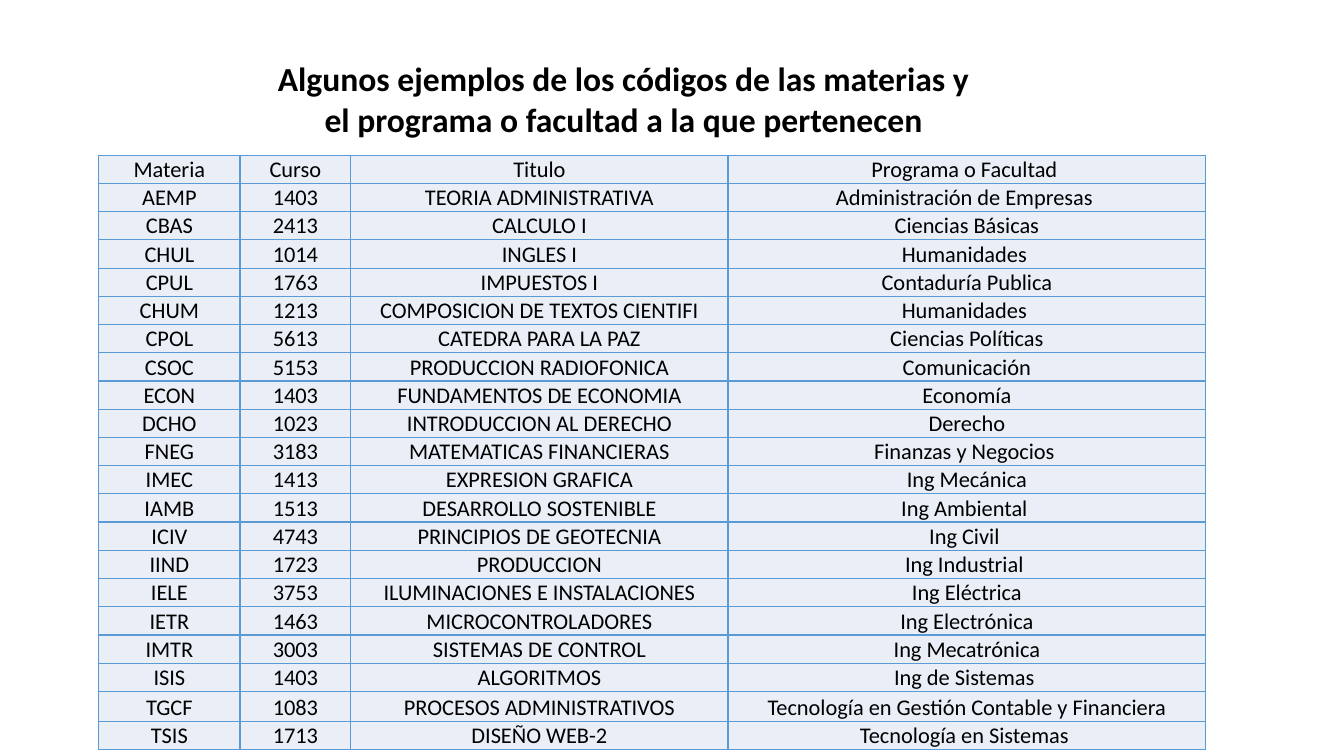
"""Build a slide that lists course codes with their programme or faculty."""
from dataclasses import dataclass

from lxml import etree
from pptx import Presentation
from pptx import util as u
from pptx.dml import color
from pptx.enum import text
from pptx.oxml import ns

FONT = "Calibri"
HUES = {"ink": "000000", "cell": "EAEFF7", "edge": "5B9BD5"}
TITLE = ("Algunos ejemplos de los códigos de las materias y "
         "el programa o facultad a la que pertenecen")
WIDTHS = [1.4, 1.1, 3.74, 4.74]
ROW_H = 0.28
TALL_H = 0.3
TALL = "TGCF"


@dataclass(frozen=True)
class Course:
    code: str
    num: str
    title: str
    school: str

    def cells(self) -> list[str]:
        return [self.code, self.num, self.title, self.school]


ROWS = [
    Course("Materia", "Curso", "Titulo", "Programa o Facultad "),
    Course("AEMP", "1403", "TEORIA ADMINISTRATIVA", "Administración de Empresas "),
    Course("CBAS", "2413", "CALCULO I", "Ciencias Básicas"),
    Course("CHUL", "1014", "INGLES I", "Humanidades "),
    Course("CPUL", "1763", "IMPUESTOS I", "Contaduría Publica"),
    Course("CHUM", "1213", "COMPOSICION DE TEXTOS CIENTIFI", "Humanidades "),
    Course("CPOL", "5613", "CATEDRA PARA LA PAZ", "Ciencias Políticas"),
    Course("CSOC", "5153", "PRODUCCION RADIOFONICA", "Comunicación"),
    Course("ECON", "1403", "FUNDAMENTOS DE ECONOMIA", "Economía"),
    Course("DCHO", "1023", "INTRODUCCION AL DERECHO", "Derecho"),
    Course("FNEG", "3183", "MATEMATICAS FINANCIERAS", "Finanzas y Negocios "),
    Course("IMEC", "1413", "EXPRESION GRAFICA", "Ing Mecánica"),
    Course("IAMB", "1513", "DESARROLLO SOSTENIBLE", "Ing Ambiental "),
    Course("ICIV", "4743", "PRINCIPIOS DE GEOTECNIA", "Ing Civil "),
    Course("IIND", "1723", "PRODUCCION", "Ing Industrial "),
    Course("IELE", "3753", "ILUMINACIONES E INSTALACIONES", "Ing Eléctrica"),
    Course("IETR", "1463", "MICROCONTROLADORES", "Ing Electrónica"),
    Course("IMTR", "3003", "SISTEMAS DE CONTROL", "Ing Mecatrónica"),
    Course("ISIS", "1403", "ALGORITMOS", "Ing de Sistemas "),
    Course("TGCF", "1083", "PROCESOS ADMINISTRATIVOS",
           "Tecnología en Gestión Contable y Financiera"),
    Course("TSIS", "1713", "DISEÑO WEB-2", "Tecnología en Sistemas "),
]


def hue(name: str) -> color.RGBColor:
    return color.RGBColor.from_string(HUES[name])


def write(frame, words: str, size: int, bold: bool = False) -> None:
    frame.text = words
    para = frame.paragraphs[0]
    para.alignment = text.PP_ALIGN.CENTER
    font = para.runs[0].font
    font.name, font.size, font.bold = FONT, u.Pt(size), bold
    font.color.rgb = hue("ink")


def edge(cell) -> None:
    props = cell._tc.get_or_add_tcPr()
    for side in ("L", "R", "T", "B"):
        line = etree.SubElement(props, ns.qn(f"a:ln{side}"), w=str(u.Pt(1)))
        fill = etree.SubElement(line, ns.qn("a:solidFill"))
        etree.SubElement(fill, ns.qn("a:srgbClr"), val=HUES["edge"])


def style(cell, words: str) -> None:
    write(cell.text_frame, words, 16)
    cell.vertical_anchor = text.MSO_ANCHOR.BOTTOM
    cell.margin_left = cell.margin_right = cell.margin_top = u.Inches(0.01)
    cell.margin_bottom = u.Inches(0)
    edge(cell)
    cell.fill.solid()
    cell.fill.fore_color.rgb = hue("cell")


def add_title(slide) -> None:
    box = slide.shapes.add_textbox(
        u.Inches(2.56), u.Inches(0.53), u.Inches(7.25), u.Inches(0.91))
    box.text_frame.word_wrap = True
    write(box.text_frame, TITLE, 24, True)


def add_grid(slide) -> None:
    highs = [TALL_H if row.code == TALL else ROW_H for row in ROWS]
    grid = slide.shapes.add_table(
        len(ROWS), len(WIDTHS), u.Inches(0.98), u.Inches(1.54),
        u.Inches(sum(WIDTHS)), u.Inches(sum(highs))).table
    grid.first_row = grid.horz_banding = False
    for col, wide in zip(grid.columns, WIDTHS):
        col.width = u.Inches(wide)
    for line, high, course in zip(grid.rows, highs, ROWS):
        line.height = u.Inches(high)
        for cell, words in zip(line.cells, course.cells()):
            style(cell, words)


def main() -> None:
    deck = Presentation()
    deck.slide_width, deck.slide_height = u.Inches(13.33), u.Inches(7.5)
    slide = deck.slides.add_slide(deck.slide_layouts[6])
    add_title(slide)
    add_grid(slide)
    deck.save("out.pptx")


if __name__ == "__main__":
    main()
